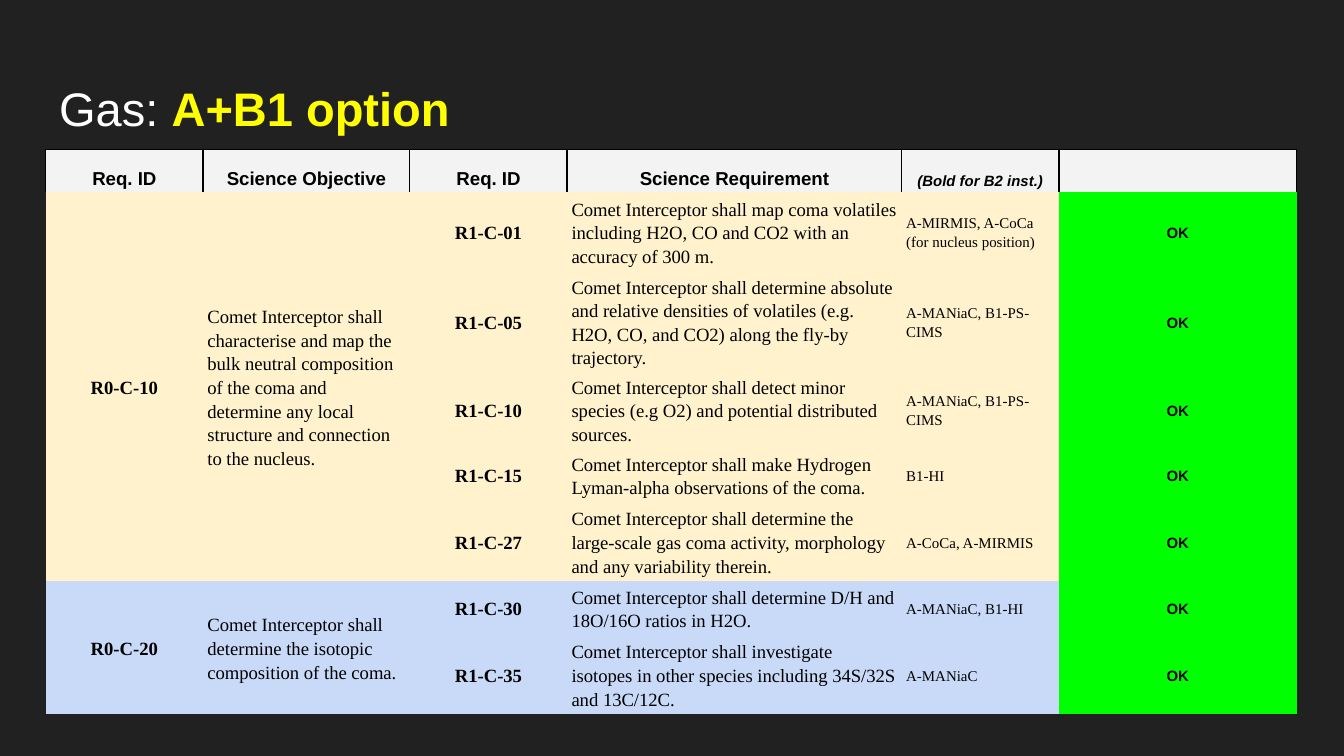
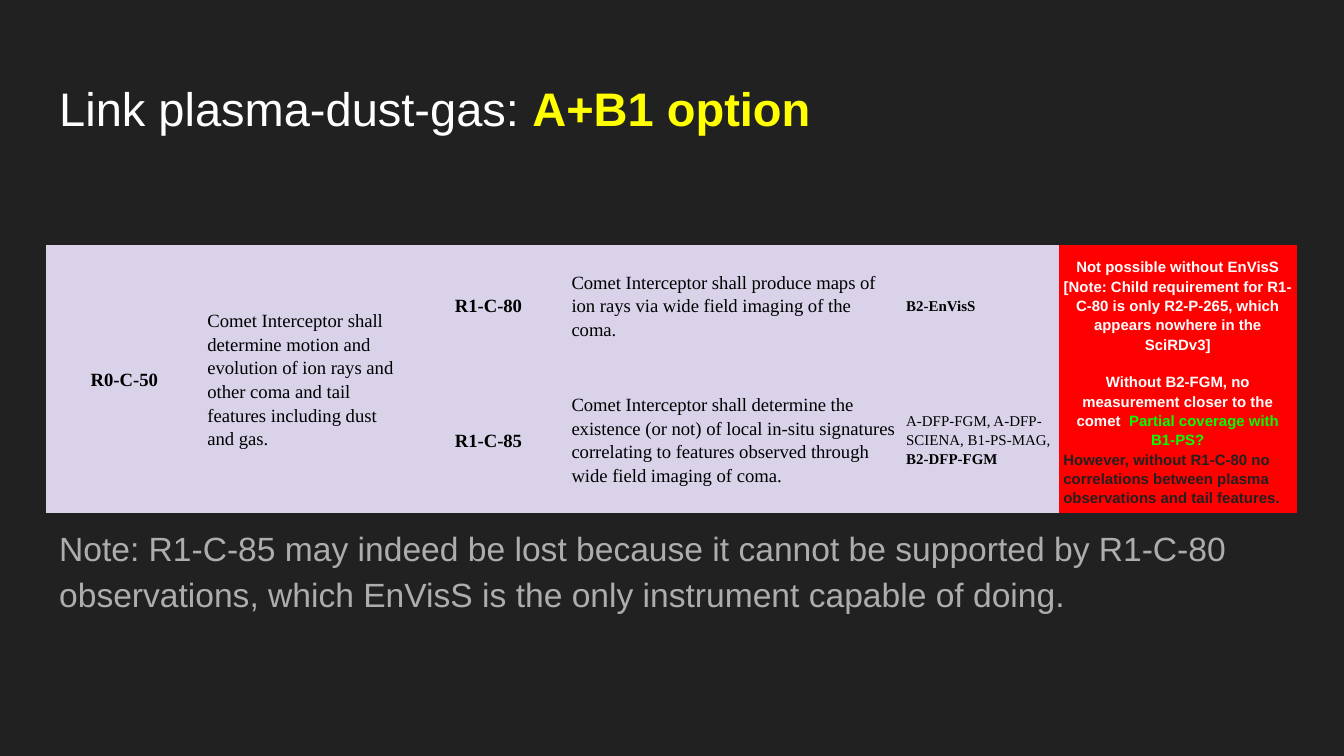
from collections import namedtuple

from lxml.etree import SubElement
from pptx import Presentation
from pptx.dml.color import RGBColor
from pptx.enum.text import MSO_ANCHOR as Anchor
from pptx.enum.text import MSO_AUTO_SIZE as AutoSize
from pptx.enum.text import PP_ALIGN as Align
from pptx.oxml.ns import qn
from pptx.util import Inches, Pt

CHARCOAL = RGBColor(0x21, 0x21, 0x21)
WHITE = RGBColor(0xFF, 0xFF, 0xFF)
BLACK = RGBColor(0x00, 0x00, 0x00)
YELLOW = RGBColor(0xFF, 0xFF, 0x00)
GREY = RGBColor(0xAD, 0xAD, 0xAD)
HEADER = RGBColor(0xF3, 0xF3, 0xF3)
CREAM = RGBColor(0xFF, 0xF2, 0xCC)
BLUE = RGBColor(0xC9, 0xDA, 0xF8)
LILAC = RGBColor(0xD9, 0xD2, 0xE9)
GREEN = RGBColor(0x00, 0xFF, 0x00)
RED = RGBColor(0xFF, 0x00, 0x00)

SANS = "Arial"
SERIF = "Times New Roman"
LEFT = 0.34
CONTENT_WIDTH = 9.32
COLUMN_WIDTHS = (1.17, 1.54, 1.17, 2.49, 1.17, 1.77)
PLAIN_TABLE_STYLE = "{2D5ABB26-0587-4C30-8999-92F81FD0307C}"

Objective = namedtuple("Objective", "id text fill requirements")
Requirement = namedtuple("Requirement", "id text instruments verdict verdict_fill height")


def supported(req_id, text, instruments, height):
    verdict = [(Align.CENTER, [("OK", BLACK)])]
    return Requirement(req_id, text, [(instruments, False)], verdict, GREEN, height)


HEADINGS = ("Req. ID", "Science Objective", "Req. ID", "Science Requirement",
            "(Bold for B2 inst.)", "")

GAS_OBJECTIVES = [
    Objective("R0-C-10",
              "Comet Interceptor shall characterise and map the bulk neutral composition "
              "of the coma and determine any local structure and connection to the nucleus.",
              CREAM, [
        supported("R1-C-01", "Comet Interceptor shall map coma volatiles including H2O, CO "
                  "and CO2 with an accuracy of 300 m.",
                  "A-MIRMIS, A-CoCa (for nucleus position)", 0.59),
        supported("R1-C-05", "Comet Interceptor shall determine absolute and relative "
                  "densities of volatiles (e.g. H2O, CO, and CO2) along the fly-by trajectory.",
                  "A-MANiaC, B1-PS-CIMS", 0.73),
        supported("R1-C-10", "Comet Interceptor shall detect minor species (e.g O2) and "
                  "potential distributed sources.", "A-MANiaC, B1-PS-CIMS", 0.56),
        supported("R1-C-15", "Comet Interceptor shall make Hydrogen Lyman-alpha "
                  "observations of the coma.", "B1-HI", 0.4),
        supported("R1-C-27", "Comet Interceptor shall determine the large-scale gas coma "
                  "activity, morphology and any variability therein.",
                  "A-CoCa, A-MIRMIS", 0.59),
    ]),
    Objective("R0-C-20",
              "Comet Interceptor shall determine the isotopic composition of the coma.",
              BLUE, [
        supported("R1-C-30", "Comet Interceptor shall determine D/H and 18O/16O ratios "
                  "in H2O.", "A-MANiaC, B1-HI", 0.4),
        supported("R1-C-35", "Comet Interceptor shall investigate isotopes in other species "
                  "including 34S/32S and 13C/12C.", "A-MANiaC", 0.59),
    ]),
]

LINK_OBJECTIVES = [
    Objective("R0-C-50",
              "Comet Interceptor shall determine motion and evolution of ion rays and other "
              "coma and tail features including dust and gas.",
              LILAC, [
        Requirement("R1-C-80", "Comet Interceptor shall produce maps of ion rays via wide "
                    "field imaging of the coma.",
                    [("B2-EnVisS", True)],
                    [(Align.CENTER, [("Not possible without EnVisS [Note: Child requirement "
                                      "for R1-C-80 is only R2-P-265, which appears nowhere "
                                      "in the SciRDv3]", WHITE)])],
                    RED, 0.9),
        Requirement("R1-C-85", "Comet Interceptor shall determine the existence (or not) of "
                    "local in-situ signatures correlating to features observed through wide "
                    "field imaging of coma.",
                    [("A-DFP-FGM, A-DFP-SCIENA, B1-PS-MAG,", False), (" B2-DFP-FGM", True)],
                    [(Align.CENTER, [("Without B2-FGM, no measurement closer to the comet",
                                      WHITE),
                                     (". ", RED),
                                     ("Partial coverage with B1-PS?", GREEN)]),
                     (Align.LEFT, [("However, without R1-C-80 no correlations between plasma "
                                    "observations and tail features.", CHARCOAL)])],
                    RED, 0.9),
    ]),
]

LINK_NOTE = ("Note: R1-C-85 may indeed be lost because it cannot be supported by R1-C-80 "
             "observations, which EnVisS is the only instrument capable of doing.")


def write(paragraph, text, size=10, font=SERIF, color=BLACK, bold=False, italic=False):
    run = paragraph.add_run()
    run.text = text
    run.font.size = Pt(size)
    run.font.name = font
    run.font.color.rgb = color
    run.font.bold = bold
    run.font.italic = italic


def place(placeholder, top, height, anchor, top_margin=0.1):
    placeholder.left, placeholder.top = Inches(LEFT), Inches(top)
    placeholder.width, placeholder.height = Inches(CONTENT_WIDTH), Inches(height)
    frame = placeholder.text_frame
    frame.word_wrap = True
    frame.auto_size = AutoSize.NONE
    frame.vertical_anchor = anchor
    frame.margin_left = frame.margin_right = frame.margin_bottom = Inches(0.1)
    frame.margin_top = Inches(top_margin)
    paragraph = frame.paragraphs[0]
    paragraph.alignment = Align.LEFT
    paragraph.space_before = Pt(0)
    return paragraph


def add_title(slide, topic):
    heading = place(slide.shapes.title, 0.49, 0.63, Anchor.MIDDLE)
    write(heading, topic, size=25.2, font=SANS, color=WHITE)
    write(heading, "A+B1 option", size=25.2, font=SANS, color=YELLOW, bold=True)


def add_note(slide, text):
    note = place(slide.placeholders[1], 1.26, 3.74, Anchor.TOP, top_margin=2.62)
    note.line_spacing = 1.15
    properties = note._p.get_or_add_pPr()
    properties.set("marL", "0")
    properties.set("indent", "0")
    SubElement(properties, qn("a:buNone"))
    write(note, text, size=18, font=SANS, color=GREY)


def add_border(cell, sides):
    properties = cell._tc.get_or_add_tcPr()
    for side in sides:
        line = SubElement(properties, qn("a:ln" + side), w=str(Pt(0.75)))
        fill = SubElement(line, qn("a:solidFill"))
        SubElement(fill, qn("a:srgbClr"), val=str(BLACK))


def format_cell(cell, fill, anchor=Anchor.MIDDLE):
    cell.fill.solid()
    cell.fill.fore_color.rgb = fill
    cell.vertical_anchor = anchor
    cell.margin_left = cell.margin_right = Pt(2.4)
    cell.margin_top = cell.margin_bottom = Pt(1.5)


def cell_line(cell, align=Align.LEFT, first=True):
    frame = cell.text_frame
    line = frame.paragraphs[0] if first else frame.add_paragraph()
    line.alignment = align
    line.line_spacing = 1.15
    return line


def fill_header(table):
    for column, heading in enumerate(HEADINGS):
        cell = table.cell(0, column)
        add_border(cell, "LRT")
        format_cell(cell, HEADER, Anchor.BOTTOM)
        if heading:
            remark = heading.startswith("(")
            write(cell_line(cell, Align.CENTER), heading, size=8 if remark else 10,
                  font=SANS, bold=True, italic=remark)
        else:
            blank = cell.text_frame.paragraphs[0]._p
            ending = SubElement(blank, qn("a:endParaRPr"), sz="1800")
            SubElement(ending, qn("a:latin"), typeface=SANS)


def fill_requirement(table, row, requirement, fill):
    for column in range(5):
        format_cell(table.cell(row, column), fill)
    id_cell, text_cell, instrument_cell, verdict_cell = (
        table.cell(row, column) for column in range(2, 6))
    write(cell_line(id_cell, Align.CENTER), requirement.id, bold=True)
    write(cell_line(text_cell), requirement.text)
    instruments = cell_line(instrument_cell)
    for name, bold in requirement.instruments:
        write(instruments, name, size=8, bold=bold)
    format_cell(verdict_cell, requirement.verdict_fill)
    for index, (align, parts) in enumerate(requirement.verdict):
        verdict = cell_line(verdict_cell, align, first=index == 0)
        for text, color in parts:
            write(verdict, text, size=8, font=SANS, color=color, bold=True)


def fill_objective(table, first_row, objective):
    for row, requirement in enumerate(objective.requirements, first_row):
        fill_requirement(table, row, requirement, objective.fill)
    last_row = first_row + len(objective.requirements) - 1
    for column in range(2):
        table.cell(first_row, column).merge(table.cell(last_row, column))
    write(cell_line(table.cell(first_row, 0), Align.CENTER), objective.id, bold=True)
    write(cell_line(table.cell(first_row, 1)), objective.text)


def add_requirements_table(slide, top, objectives, header_height=None):
    heights = [header_height] if header_height else []
    heights += [req.height for objective in objectives for req in objective.requirements]
    frame = slide.shapes.add_table(len(heights), len(COLUMN_WIDTHS), Inches(LEFT), Inches(top),
                                   Inches(sum(COLUMN_WIDTHS)), Inches(sum(heights)))
    for style in frame.element.iter(qn("a:tableStyleId")):
        style.text = PLAIN_TABLE_STYLE
    table = frame.table
    table.first_row = table.horz_banding = False
    for column, width in zip(table.columns, COLUMN_WIDTHS):
        column.width = Inches(width)
    for row, height in zip(table.rows, heights):
        row.height = Inches(height)
    next_row = 0
    if header_height:
        fill_header(table)
        next_row = 1
    for objective in objectives:
        fill_objective(table, next_row, objective)
        next_row += len(objective.requirements)


def main():
    deck = Presentation()
    deck.slide_width = Inches(10)
    deck.slide_height = deck.slide_width * 9 // 16
    background = deck.slide_master.background.fill
    background.solid()
    background.fore_color.rgb = CHARCOAL

    gas = deck.slides.add_slide(deck.slide_layouts[5])
    add_title(gas, "Gas: ")
    add_requirements_table(gas, 1.11, GAS_OBJECTIVES, header_height=0.27)

    link = deck.slides.add_slide(deck.slide_layouts[1])
    add_title(link, "Link plasma-dust-gas: ")
    add_note(link, LINK_NOTE)
    add_requirements_table(link, 1.82, LINK_OBJECTIVES)

    deck.save("out.pptx")


if __name__ == "__main__":
    main()
